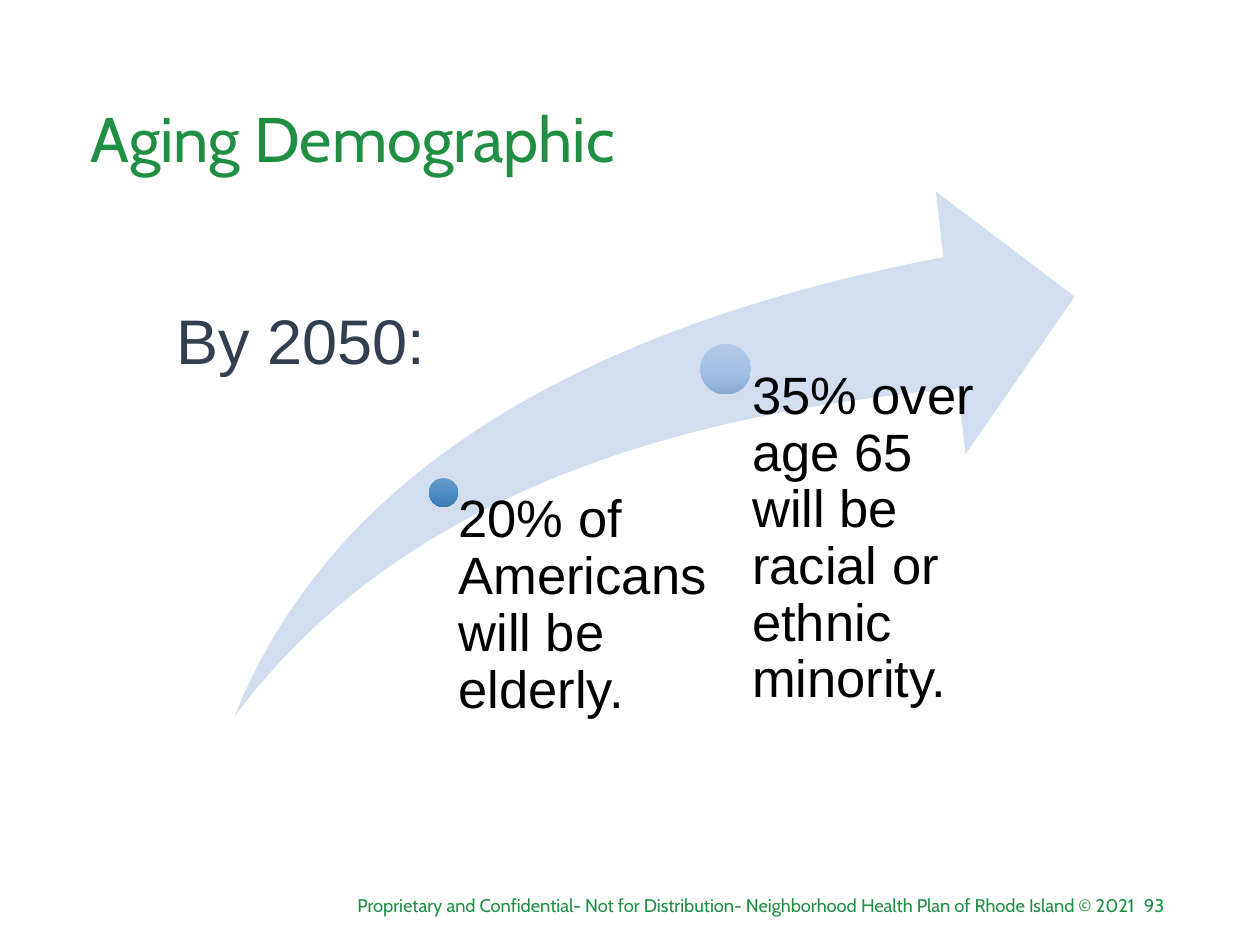
import copy

import pptx
import pptx.dml.color
import pptx.enum.shapes
import pptx.enum.text
import pptx.util

Inches = pptx.util.Inches
SHAPES = pptx.enum.shapes.MSO_SHAPE
ALIGN = pptx.enum.text.PP_ALIGN
ANCHOR = pptx.enum.text.MSO_ANCHOR
GREEN = "208F44"


def color(value):
    return pptx.dml.color.RGBColor.from_string(value)


def write(box, text, size, font, ink, align=ALIGN.LEFT, anchor=ANCHOR.TOP,
          spacing=1.0, insets=(0.1, 0.05, 0.1, 0.05)):
    frame = box.text_frame
    frame.word_wrap = True
    frame.auto_size = pptx.enum.text.MSO_AUTO_SIZE.NONE
    frame.vertical_anchor = anchor
    (frame.margin_left, frame.margin_top,
     frame.margin_right, frame.margin_bottom) = map(Inches, insets)
    para = frame.paragraphs[0]
    para.alignment = align
    para.line_spacing = spacing
    span = para.add_run()
    span.text = text
    span.font.size = pptx.util.Pt(size)
    span.font.name = font
    span.font.color.rgb = color(ink)


deck = pptx.Presentation()
deck.slide_width, deck.slide_height = Inches(10), Inches(7.5)
page = deck.slides.add_slide(deck.slide_layouts[5])
shapes = page.shapes

# Footer and page number
footer = "Proprietary and Confidential- Not for Distribution- Neighborhood Health Plan of Rhode Island © 2021"
for text, left, width in (("93", 8.88, 0.46), (footer, 2.5, 6.61)):
    box = shapes.add_textbox(*map(Inches, (left, 7.05, width, 0.28)))
    write(box, text, 10.5, "Cabin", GREEN, align=ALIGN.RIGHT)

# Title
title = shapes.title
title.left, title.top, title.width, title.height = map(Inches, (0.62, 0.4, 8.62, 1.45))
write(title, "Aging Demographic", 36, "Cabin", GREEN, anchor=ANCHOR.MIDDLE, spacing=0.9)

# Rising arrow
arrow_left, arrow_top, arrow_width, arrow_height = 1.86, 1.52, 6.67, 4.17
arrow = shapes.add_shape(SHAPES.SWOOSH_ARROW, *map(
    Inches, (arrow_left, arrow_top, arrow_width, arrow_height)))
arrow.adjustments[0] = arrow.adjustments[1] = 0.25
arrow.shadow.inherit = False
arrow.fill.solid()
arrow.fill.fore_color.rgb = color("D2DEEF")
arrow.line.fill.background()

# Milestones: each text starts at its dot's centre and ends at the arrow's foot
milestones = (
    ("20% of Americans will be elderly.", 3.52, 3.91, 0.23, 0.12,
     ("6B99C9", "4D8DC7", "3E7EB7")),
    ("35% over age 65 will be racial or ethnic minority.", 5.76, 2.93, 0.4, 0.21,
     ("B1C9E7", "A2C1E6", "8CABD1")),
)
for text, x, y, size, inset, tones in milestones:
    dot = shapes.add_shape(SHAPES.OVAL, *map(
        Inches, (x - size / 2, y - size / 2, size, size)))
    dot.shadow.inherit = False
    dot.line.fill.background()
    dot.fill.gradient()
    dot.fill.gradient_angle = 270
    first = dot.fill.gradient_stops[0]._gs
    middle = copy.deepcopy(first)
    middle.set("pos", "50000")
    first.addnext(middle)
    for stop, tone in zip(dot.fill.gradient_stops, tones):
        stop.color.rgb = color(tone)

    box = shapes.add_textbox(*map(
        Inches, (x, y, 2.17, arrow_top + arrow_height - y)))
    write(box, text, 30, "Arial", "000000", spacing=0.9, insets=(inset, 0, 0, 0))

# Year label
box = shapes.add_textbox(*map(Inches, (1.3, 2.34, 2.67, 0.71)))
write(box, "By 2050:", 36, "Arial", "333F50")

deck.save("out.pptx")
